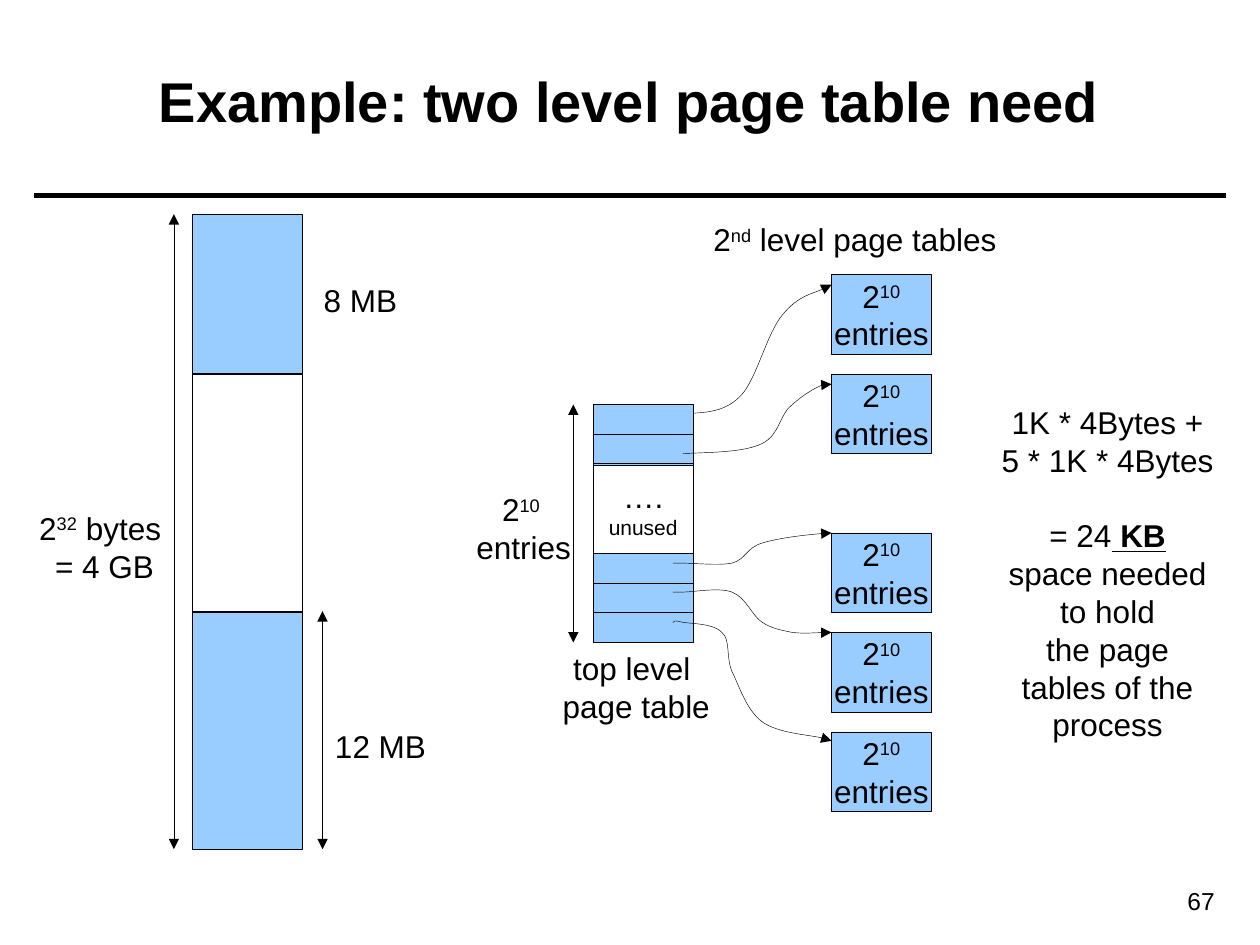
"""Build a slide that works out the space taken by a two level page table."""
from dataclasses import dataclass
from typing import Any, NamedTuple, Optional

from lxml.etree import SubElement
from pptx import Presentation
from pptx.dml.color import RGBColor
from pptx.enum.shapes import MSO_CONNECTOR as Link, MSO_SHAPE as Preset
from pptx.enum.text import MSO_ANCHOR as Anchor, MSO_AUTO_SIZE as Fit, PP_ALIGN as Align
from pptx.oxml.ns import qn
from pptx.util import Pt

SCALE = 9144


@dataclass(frozen=True)
class Theme:
    font: str = "Arial"
    ink: RGBColor = RGBColor(0, 0, 0)
    used: RGBColor = RGBColor(0x99, 0xCC, 0xFF)
    title: float = 32
    body: float = 18
    number: float = 14
    small: float = 12
    blank_line: float = 21.6
    hairline: float = 0.25
    rule: float = 3


class Span(NamedTuple):
    text: str
    size: float = 18
    raised: bool = False
    bold: bool = False
    underline: bool = False


class Area(NamedTuple):
    left: int
    top: int
    width: int
    height: int


class Label(NamedTuple):
    area: Area
    lines: list[list[Span]]
    align: Align = Align.CENTER
    anchor: Anchor = Anchor.TOP
    gap_before: Optional[int] = None


class Block(NamedTuple):
    area: Area
    used: bool = True
    lines: list[list[Span]] = []


class Stroke(NamedTuple):
    start: tuple[int, int]
    end: tuple[int, int]
    width: float = 0.25
    arrows: tuple[str, ...] = ("headEnd", "tailEnd")


THEME = Theme()
Point = tuple[int, int]


def plain(*texts: str) -> list[list[Span]]:
    """Turn each text into a paragraph of body type."""
    return [[Span(text, THEME.body)] for text in texts]


def power(exponent: str, rest: str = "") -> list[Span]:
    """Give the spans of a 2 with a raised exponent."""
    return [Span("2"), Span(exponent, raised=True)] + ([Span(rest)] if rest else [])


def apply(target: Any, values: dict[str, Any]) -> None:
    """Set each named attribute of the target."""
    for name, value in values.items():
        setattr(target, name, value)


def emu(*lengths: int) -> list[int]:
    """Convert px to EMU."""
    return [length * SCALE for length in lengths]


def write(frame: Any, lines: list[list[Span]], align: Align, gap_before: Optional[int] = None) -> None:
    """Fill a text frame with formatted paragraphs."""
    for index, spans in enumerate(lines):
        para = frame.add_paragraph() if index else frame.paragraphs[0]
        para.alignment = align
        if index == gap_before:
            para.space_before = Pt(THEME.blank_line)
        for item in spans:
            for row, piece in enumerate(item.text.split("\n")):
                if row:
                    para.add_line_break()
                if not piece:
                    continue
                span = para.add_run()
                span.text = piece
                apply(span.font, {"name": THEME.font, "size": Pt(item.size),
                                  "bold": item.bold, "underline": item.underline})
                span.font.color.rgb = THEME.ink
                if item.raised:
                    span.font._element.set("baseline", "30000")


def ink_line(shape: Any, width: float, arrows: tuple[str, ...] = ()) -> None:
    """Give a shape a black line, with arrowheads where named."""
    shape.line.color.rgb = THEME.ink
    shape.line.width = Pt(width)
    for end in arrows:
        SubElement(shape.line._get_or_add_ln(), qn(f"a:{end}"), type="triangle")


def draw_label(page: Any, label: Label) -> None:
    """Draw unwrapped text in a box."""
    box = page.shapes.add_textbox(*emu(*label.area))
    apply(box.text_frame, {"word_wrap": False, "auto_size": Fit.NONE,
                           "vertical_anchor": label.anchor})
    write(box.text_frame, label.lines, label.align, label.gap_before)


def draw_block(page: Any, block: Block) -> None:
    """Draw a block of memory or of table entries."""
    box = page.shapes.add_shape(Preset.RECTANGLE, *emu(*block.area))
    box.shadow.inherit = False
    if block.used:
        box.fill.solid()
        box.fill.fore_color.rgb = THEME.used
    else:
        box.fill.background()
    ink_line(box, THEME.hairline)
    apply(box.text_frame, {"word_wrap": False, "vertical_anchor": Anchor.MIDDLE})
    write(box.text_frame, block.lines, Align.CENTER)


def draw_stroke(page: Any, stroke: Stroke) -> None:
    """Draw a straight line."""
    line = page.shapes.add_connector(Link.STRAIGHT, *emu(*stroke.start, *stroke.end))
    ink_line(line, stroke.width, stroke.arrows)
    SubElement(line._element.spPr, qn("a:effectLst"))


def draw_curve(page: Any, points: list[Point]) -> None:
    """Draw an arrow of cubic curves, three points to each after the start."""
    builder = page.shapes.build_freeform(*points[0], scale=float(SCALE))
    builder.add_line_segments(points[1:], close=False)
    curve = builder.convert_to_shape()
    curve.shadow.inherit = False
    curve.fill.background()
    ink_line(curve, THEME.hairline, ("tailEnd",))
    steps = curve._element.xpath(".//a:lnTo")
    for first in range(0, len(steps), 3):
        bezier = SubElement(steps[first].getparent(), qn("a:cubicBezTo"))
        for step in steps[first:first + 3]:
            bezier.append(step[0])
            step.getparent().remove(step)


ENTRIES = [power("10") + [Span("\nentries")]]
MEMORY = [Block(Area(153, 485, 87, 189)), Block(Area(153, 170, 87, 126)),
          Block(Area(153, 297, 87, 189), used=False)]
TOP_LEVEL = [Block(Area(471, 321 + round(23.6 * slot), 79, 24)) for slot in (0, 1, 5, 6, 7)]
UNUSED = Block(Area(471, 368, 79, 71), False, [[Span("….")], [Span("unused", THEME.small)]])
SECOND_LEVEL = [Block(Area(660, start + 79 * index, 79, 63), True, ENTRIES)
                for start, count in ((218, 2), (423, 3)) for index in range(count)]
STROKES = [
    Stroke((27, 155), (973, 155), THEME.rule, ()),
    Stroke((256, 485), (256, 674)),
    Stroke((138, 170), (138, 674)),
    Stroke((455, 321), (455, 510)),
]
CURVES = [
    [(550, 328), (564, 327), (577, 326), (589, 313), (601, 299), (609, 264), (621, 250),
     (633, 235), (655, 230), (660, 226)],
    [(542, 360), (566, 359), (591, 359), (605, 352), (619, 345), (619, 328), (629, 321),
     (638, 313), (659, 300), (660, 305)],
    [(534, 447), (534, 447), (534, 447), (542, 447), (550, 447), (571, 449), (581, 447),
     (592, 444), (592, 435), (605, 431), (618, 427), (652, 423), (660, 423)],
    [(534, 494), (535, 493), (535, 492), (542, 494), (549, 495), (567, 495), (573, 502),
     (580, 508), (576, 521), (581, 533), (587, 545), (592, 563), (605, 573),
     (618, 582), (653, 584), (660, 588)],
    [(534, 470), (534, 470), (534, 470), (542, 470), (550, 470), (571, 466), (581, 470),
     (592, 474), (597, 489), (605, 494), (613, 499), (619, 500), (629, 502),
     (638, 503), (649, 502), (660, 502)],
]
TOTAL = [*plain("1K * 4Bytes +", "5 * 1K * 4Bytes"),
         [Span("= 24"), Span(" KB", bold=True, underline=True)],
         *plain("space needed\nto hold\nthe page\ntables of the", "process")]
LABELS = [
    Label(Area(870, 698, 104, 34), [[Span("67", THEME.number)]], Align.RIGHT),
    Label(Area(35, 17, 929, 125),
          [[Span("Example: two level page table need", THEME.title, bold=True)]],
          anchor=Anchor.MIDDLE),
    Label(Area(256, 572, 92, 40), plain("12 MB")),
    Label(Area(247, 218, 78, 40), plain("8 MB")),
    Label(Area(20, 399, 119, 70), [power("32", " bytes\n = 4 GB")]),
    Label(Area(555, 170, 247, 40), [power("nd", " level page tables")]),
    Label(Area(437, 510, 136, 70), plain("top level ", "page table")),
    Label(Area(368, 384, 95, 70), [power("10 "), [Span("entries")]]),
    Label(Area(785, 315, 188, 280), TOTAL, gap_before=2),
]


def main() -> None:
    """Draw the slide and save it."""
    deck = Presentation()
    apply(deck, dict(zip(("slide_width", "slide_height"), emu(1000, 750))))
    page = deck.slides.add_slide(deck.slide_layouts[6])
    for draw, items in ((draw_block, [*MEMORY, *TOP_LEVEL, UNUSED, *SECOND_LEVEL]),
                        (draw_stroke, STROKES), (draw_curve, CURVES), (draw_label, LABELS)):
        for item in items:
            draw(page, item)
    deck.save("out.pptx")


if __name__ == "__main__":
    main()
